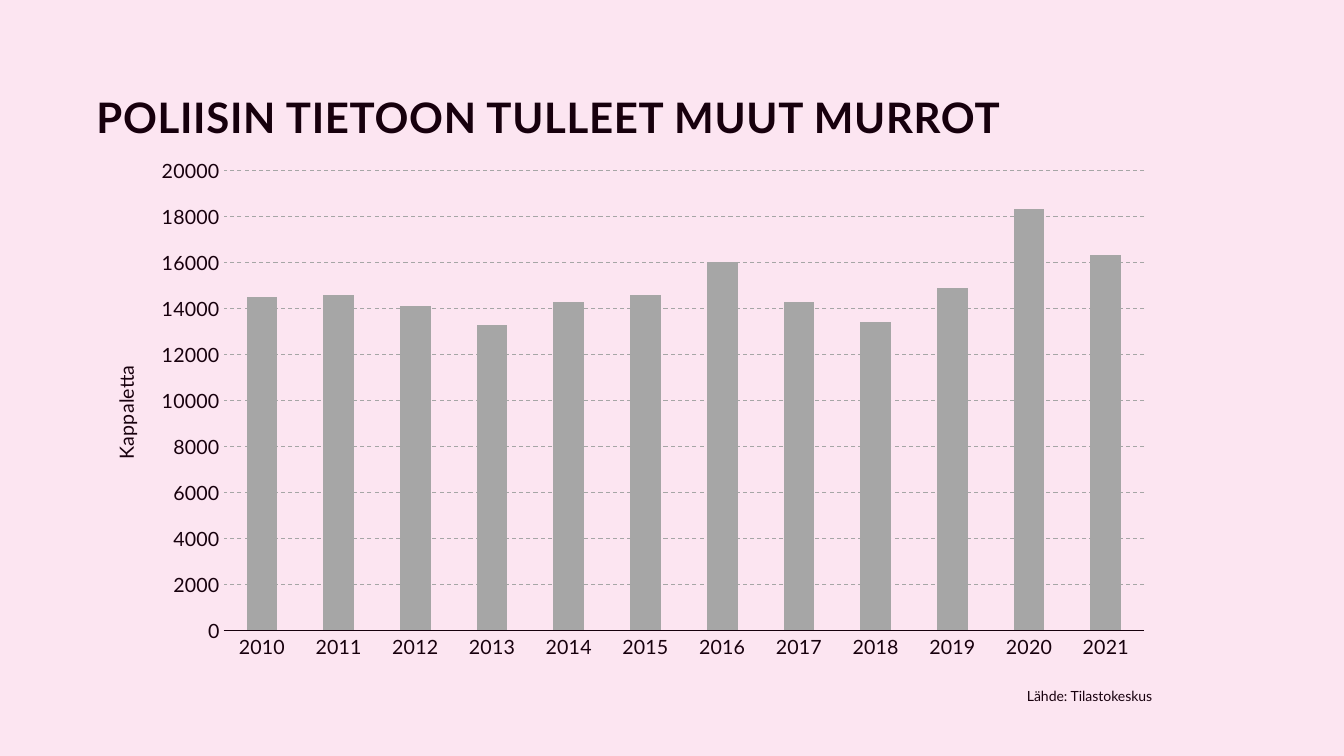
from dataclasses import dataclass

from lxml import etree
from pptx import Presentation
from pptx import util as u
from pptx.chart import data as chart_data
from pptx.dml import color
from pptx.enum import chart as ce, dml, text
from pptx.oxml import ns


@dataclass(frozen=True)
class Theme:
    font: str = "Lato"
    ink: color.RGBColor = color.RGBColor.from_string("17000D")
    paper: color.RGBColor = color.RGBColor.from_string("FCE5F1")
    grey: color.RGBColor = color.RGBColor.from_string("A6A6A6")
    title_size: int = 30
    chart_size: int = 14
    source_size: int = 10


theme = Theme()


def style_font(font, size, bold=False):
    font.name = theme.font
    font.size = u.Pt(size)
    font.bold = bold
    font.color.rgb = theme.ink


def place(parent, index, **settings):
    """Give a chart part a manual layout, as fractions of the chart."""
    for old in parent.findall(ns.qn("c:layout")):
        parent.remove(old)
    layout = etree.Element(ns.qn("c:layout"))
    manual = etree.SubElement(layout, ns.qn("c:manualLayout"))
    for name, value in settings.items():
        etree.SubElement(manual, ns.qn(f"c:{name}")).set("val", str(value))
    parent.insert(index, layout)


deck = Presentation()
deck.slide_width, deck.slide_height = u.Cm(33.87), u.Cm(19.05)
page = deck.slides.add_slide(deck.slide_layouts[6])
page.background.fill.solid()
page.background.fill.fore_color.rgb = theme.paper

# Title and source line
labels = [
    ("POLIISIN TIETOON TULLEET MUUT MURROT", (2.18, 0.05, 28.35, 3.68),
     theme.title_size, True, text.MSO_ANCHOR.BOTTOM),
    ("Lähde: Tilastokeskus", (25.63, 17.2, 4.06, 0.69),
     theme.source_size, False, text.MSO_ANCHOR.TOP),
]
for wording, area, size, bold, anchor in labels:
    box = page.shapes.add_textbox(*(u.Cm(length) for length in area))
    frame = box.text_frame
    frame.word_wrap = True
    frame.vertical_anchor = anchor
    frame.text = wording
    para = frame.paragraphs[0]
    span = para.runs[0]
    style_font(span.font, size, bold)
    if bold:
        para.line_spacing = 0.9
        span.font._element.set("spc", "50")

# Column chart
burglaries = chart_data.CategoryChartData()
burglaries.categories = [str(year) for year in range(2010, 2022)]
burglaries.add_series("Series 1", [14500, 14600, 14100, 13300, 14300, 14600,
                                   16000, 14300, 13400, 14900, 18300, 16300])
chart = page.shapes.add_chart(
    ce.XL_CHART_TYPE.COLUMN_CLUSTERED,
    u.Cm(2.18), u.Cm(3.73), u.Cm(27.2), u.Cm(13.13), burglaries).chart
chart.has_legend = False
chart.has_title = False
style_font(chart.font, theme.chart_size)

plot = chart.plots[0]
plot.gap_width = 150
plot.vary_by_categories = False
columns = plot.series[0].format.fill
columns.solid()
columns.fore_color.rgb = theme.grey

# Axes
years, counts = chart.category_axis, chart.value_axis
for axis in (years, counts):
    axis.major_tick_mark = axis.minor_tick_mark = ce.XL_TICK_MARK.NONE
    style_font(axis.tick_labels.font, theme.chart_size)
years.format.line.color.rgb = theme.ink
years.format.line.width = u.Pt(0.75)
counts.format.line.fill.background()
counts.minimum_scale, counts.maximum_scale, counts.major_unit = 0, 20000, 2000
counts.tick_labels.number_format = "0"
counts.tick_labels.number_format_is_linked = False
counts.has_major_gridlines = True
grid = counts.major_gridlines.format.line
grid.color.rgb = theme.grey
grid.width = u.Pt(0.75)
grid.dash_style = dml.MSO_LINE.DASH

# Axis title
frame = counts.axis_title.text_frame
frame.text = "Kappaletta"
style_font(frame.paragraphs[0].runs[0].font, theme.chart_size)
turn = frame._txBody.find(ns.qn("a:bodyPr"))
turn.set("rot", "-5400000")
turn.set("vert", "horz")

# Positions inside the chart
place(counts.axis_title._element, 1, xMode="edge", yMode="edge", x=0.02, y=0.41)
place(chart._chartSpace.chart.plotArea, 0, layoutTarget="inner",
      xMode="edge", yMode="edge", x=0.127, y=0.043, w=0.853, h=0.883)

deck.save("out.pptx")
